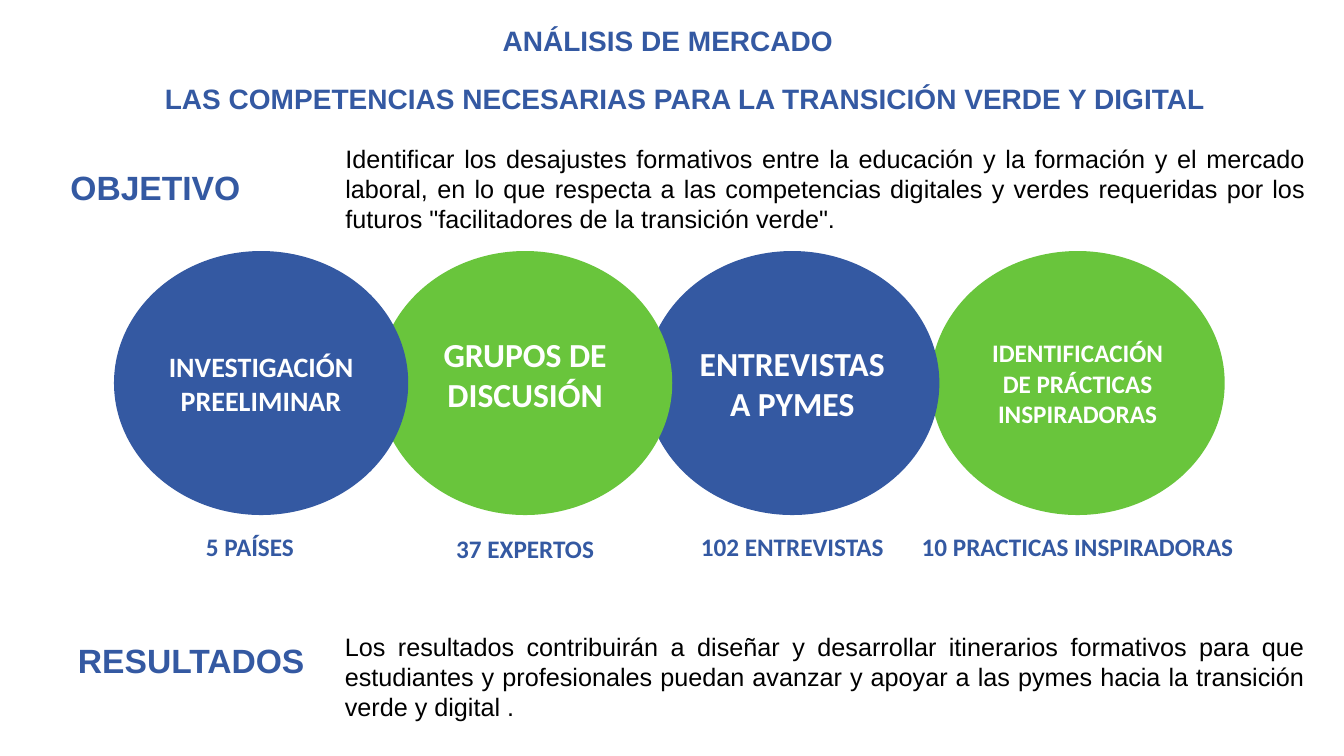
from dataclasses import dataclass

from pptx import Presentation
from pptx.dml.color import RGBColor
from pptx.enum.shapes import MSO_SHAPE
from pptx.enum.text import MSO_ANCHOR, MSO_AUTO_SIZE, PP_ALIGN
from pptx.util import Pt


@dataclass(frozen=True)
class Theme:
    blue: RGBColor = RGBColor(0x34, 0x59, 0xA2)
    green: RGBColor = RGBColor(0x69, 0xC5, 0x3C)
    white: RGBColor = RGBColor(0xFF, 0xFF, 0xFF)
    black: RGBColor = RGBColor(0, 0, 0)
    sans: str = "Arial"
    rounded: str = "Calibri"
    title: int = 20
    label: int = 24
    body: int = 18


THEME = Theme()

# Circle: text, text size, fill, left, lift of the text; caption: text, width, shift, drop
STAGES = [
    ("INVESTIGACIÓN PREELIMINAR", 20, THEME.blue, 0, 0, "5 PAÍSES", 94, -8, 0),
    ("GRUPOS DE DISCUSIÓN", 24, THEME.green, 188.6, 12.8, "37 EXPERTOS", 114, 0, 1.4),
    ("ENTREVISTAS A PYMES", 24, THEME.blue, 379.4, 0, "102 ENTREVISTAS", 179, 0, 0),
    ("IDENTIFICACIÓN DE PRÁCTICAS INSPIRADORAS", 18, THEME.green, 583.2, 0,
     "10 PRACTICAS INSPIRADORAS", 253, 0, 0),
]
CIRCLE_W, CIRCLE_H = 210.2, 188.6


def write(sp, text, size, color, font=THEME.sans, bold=True,
          align=PP_ALIGN.CENTER, anchor=MSO_ANCHOR.TOP):
    tf = sp.text_frame
    tf.auto_size = MSO_AUTO_SIZE.NONE
    tf.word_wrap = True
    tf.vertical_anchor = anchor
    p = tf.paragraphs[0]
    p.text = text
    p.alignment = align
    p.font.name = font
    p.font.size = Pt(size)
    p.font.bold = bold
    p.font.color.rgb = color


def add_text(s, x, y, w, h, *args, **kwargs):
    sp = s.shapes.add_textbox(Pt(x), Pt(y), Pt(w), Pt(h))
    write(sp, *args, **kwargs)


def add_heading(s, x, y, w, title, subtitle):
    sp = s.shapes.title
    sp.left, sp.top, sp.width, sp.height = Pt(x), Pt(y), Pt(w), Pt(31.7)
    write(sp, title, THEME.title, THEME.blue)
    add_text(s, x + 9.4, y + 41.8, w, 31.7, subtitle, THEME.title, THEME.blue)


def add_section(s, x, y, w, label, label_x, label_dy, text):
    add_text(s, label_x, y + label_dy, 190, 36, label, THEME.label, THEME.blue,
             align=PP_ALIGN.LEFT)
    add_text(s, x, y, w, 72.7, text, THEME.body, THEME.black, bold=False,
             align=PP_ALIGN.JUSTIFY)


def add_stages(s, x, y):
    # Overlapping circles, the leftmost in front
    for text, size, fill, left, lift, *_ in reversed(STAGES):
        sp = s.shapes.add_shape(MSO_SHAPE.OVAL, Pt(x + left), Pt(y),
                                Pt(CIRCLE_W), Pt(CIRCLE_H))
        sp.shadow.inherit = False
        sp.fill.solid()
        sp.fill.fore_color.rgb = fill
        sp.line.fill.background()
        write(sp, text, size, THEME.white, THEME.rounded, anchor=MSO_ANCHOR.MIDDLE)
        sp.text_frame.margin_bottom = Pt(3.6 + lift)

    # Captions centred below the circles
    for *_, left, _, caption, width, shift, drop in STAGES:
        cx = x + left + CIRCLE_W / 2 + shift
        add_text(s, cx - width / 2, y + CIRCLE_H + 8 + drop, width, 29, caption,
                 THEME.body, THEME.blue, THEME.rounded)


def main():
    prs = Presentation()
    prs.slide_width, prs.slide_height = Pt(960), Pt(540)
    s = prs.slides.add_slide(prs.slide_layouts[5])

    add_heading(s, 48.2, 13, 863.3, "ANÁLISIS DE MERCADO ",
                "LAS COMPETENCIAS NECESARIAS PARA LA TRANSICIÓN VERDE Y DIGITAL")
    add_stages(s, 81.4, 179.3)
    add_section(s, 239.6, 98.6, 699.8, "OBJETIVO", 43.2, 17.3,
                "Identificar los desajustes formativos entre la educación y la formación "
                "y el mercado laboral, en lo que respecta a las competencias digitales y "
                "verdes requeridas por los futuros \"facilitadores de la transición verde\".")
    add_section(s, 239.2, 447.1, 699.8, "RESULTADOS", 48.6, 6.5,
                "Los resultados contribuirán a diseñar y desarrollar itinerarios formativos "
                "para que estudiantes y profesionales puedan avanzar y apoyar a las pymes "
                "hacia la transición verde y digital .")
    prs.save("out.pptx")


if __name__ == "__main__":
    main()
